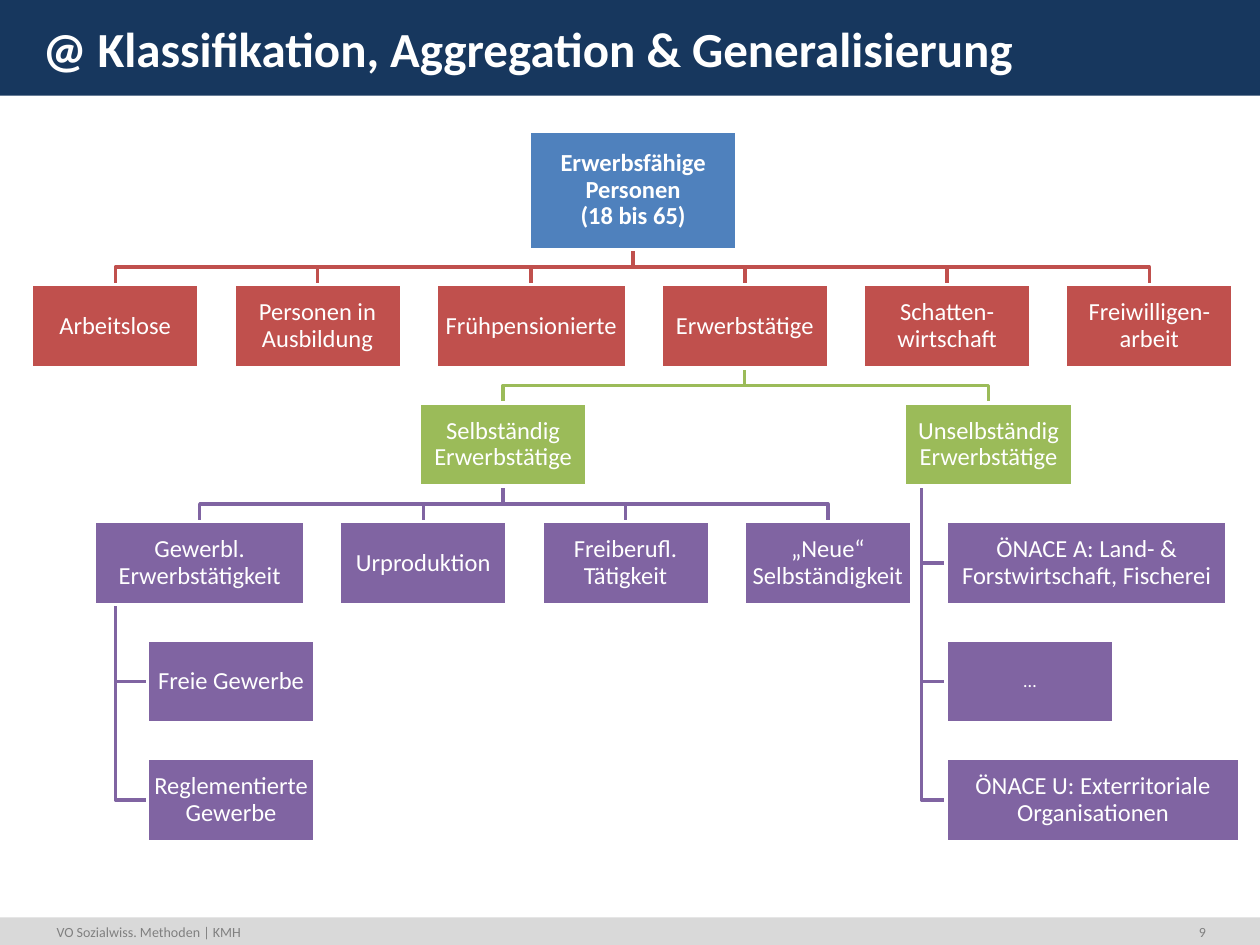
from dataclasses import dataclass

from pptx import Presentation
from pptx import util as u
from pptx.dml.color import RGBColor
from pptx.enum import shapes, text

Pt = u.Pt


@dataclass(frozen=True)
class Theme:
    font: str = "Calibri"
    navy: str = "17375E"
    band: str = "D9D9D9"
    gray: str = "808080"
    white: str = "FFFFFF"
    blue: str = "4F81BD"
    red: str = "C0504D"
    green: str = "9BBB59"
    violet: str = "8064A2"
    head: float = 28
    body: float = 14
    dots: float = 10.5
    foot: float = 8
    line: float = 2


@dataclass
class Box:
    label: str
    x: float
    y: float
    w: float
    h: float
    fill: str
    size: float = Theme.body
    bold: bool = False

    @property
    def mid(self):
        return self.x + self.w / 2

    @property
    def low(self):
        return self.y + self.h


T = Theme()
WIDE, HIGH = 720, 540
BOX_W, BOX_H = 95.8, 47.5
GAP, STEP, TOP = 19.8, 67.7, 162.7


def color(code):
    return RGBColor.from_string(code)


def assign(item, values):
    for name, value in values.items():
        setattr(item, name, value)


def write(shape, words, frame, para, size, shade, bold=False):
    body = shape.text_frame
    assign(body, {"word_wrap": True, **frame})
    first = body.paragraphs[0]
    first.text = words
    assign(first, para)
    for run in first.runs:
        assign(run.font, {"name": T.font, "size": Pt(size), "bold": bold})
        run.font.color.rgb = color(shade)


def label(slide, words, area, size, shade, bold=False, align=text.PP_ALIGN.LEFT):
    box = slide.shapes.add_textbox(*map(Pt, area))
    write(box, words, {"vertical_anchor": text.MSO_ANCHOR.TOP},
          {"alignment": align}, size, shade, bold)


def rect(slide, area, fill, edge=None):
    shape = slide.shapes.add_shape(shapes.MSO_SHAPE.RECTANGLE, *map(Pt, area))
    shape.shadow.inherit = False
    shape.fill.solid()
    shape.fill.fore_color.rgb = color(fill)
    if edge:
        shape.line.color.rgb = color(edge)
        shape.line.width = Pt(T.line)
    else:
        shape.line.fill.background()
    return shape


def node(slide, box):
    shape = rect(slide, (box.x, box.y, box.w, box.h), box.fill, T.white)
    sides = ("left", "top", "right", "bottom")
    frame = {f"margin_{side}": Pt(0.7) for side in sides}
    frame["vertical_anchor"] = text.MSO_ANCHOR.MIDDLE
    para = {"alignment": text.PP_ALIGN.CENTER, "line_spacing": 0.9}
    write(shape, box.label, frame, para, box.size, T.white, box.bold)


def bend(slide, points, shade):
    """Draw an open line through the points."""
    first, *rest = [(Pt(x), Pt(y)) for x, y in points]
    form = slide.shapes.build_freeform(*first)
    form.add_line_segments(rest, close=False)
    shape = form.convert_to_shape()
    shape.shadow.inherit = False
    shape.fill.background()
    shape.line.color.rgb = color(shade)
    shape.line.width = Pt(T.line)


def fork(slide, top, kids):
    """Link a box to the row below it."""
    for kid in kids:
        half = (top.low + kid.y) / 2
        bend(slide, [(top.mid, top.low), (top.mid, half),
                     (kid.mid, half), (kid.mid, kid.y)], kid.fill)


def hang(slide, top, kids):
    """Link a box to the stack that hangs from its left edge."""
    x = top.x + top.w / 10
    for kid in kids:
        y = kid.y + kid.h / 2
        bend(slide, [(x, top.low), (x, y), (kid.x, y)], kid.fill)


def row(level, x, fill, items):
    """Set boxes side by side at an equal gap."""
    boxes = []
    for words, width in items:
        boxes.append(Box(words, x, TOP + level * STEP, width, BOX_H, fill))
        x += width + GAP
    return boxes


def stack(level, x, fill, items):
    return [Box(words, x, TOP + (level + i) * STEP, width, BOX_H, fill)
            for i, (words, width) in enumerate(items)]


def chart(slide):
    root = Box("Erwerbsfähige Personen\n(18 bis 65)", 302.4, 74.9, 118.8, 67.7,
               T.blue, bold=True)
    groups = row(0, 18, T.red, [
        ("Arbeitslose", BOX_W), ("Personen in Ausbildung", BOX_W),
        ("Frühpensionierte", 108.7), ("Erwerbstätige", BOX_W),
        ("Schatten-wirtschaft", BOX_W), ("Freiwilligen-arbeit", BOX_W)])
    own = Box("Selbständig Erwerbstätige", 239.6, TOP + STEP, BOX_W, BOX_H, T.green)
    hired = Box("Unselbständig Erwerbstätige", 517, TOP + STEP, BOX_W, BOX_H, T.green)
    kinds = row(2, 54, T.violet, [
        ("Gewerbl. Erwerbstätigkeit", 120.2), ("Urproduktion", BOX_W),
        ("Freiberufl. Tätigkeit", BOX_W), ("„Neue“ Selbständigkeit", BOX_W)])
    trades = stack(3, 84.2, T.violet, [
        ("Freie Gewerbe", BOX_W), ("Reglementierte Gewerbe", BOX_W)])
    fields = stack(2, 540.7, T.violet, [
        ("ÖNACE A: Land- & Forstwirtschaft, Fischerei", 160.6), ("…", BOX_W),
        ("ÖNACE U: Exterritoriale Organisationen", 167.8)])
    fields[1].size = T.dots

    fork(slide, root, groups)
    fork(slide, groups[3], [own, hired])
    fork(slide, own, kinds)
    hang(slide, kinds[0], trades)
    hang(slide, hired, fields)
    for box in [root, *groups, own, hired, *kinds, *trades, *fields]:
        node(slide, box)


def main():
    deck = Presentation()
    assign(deck, {"slide_width": Pt(WIDE), "slide_height": Pt(HIGH)})
    slide = deck.slides.add_slide(deck.slide_layouts[6])
    rect(slide, (0, 524.2, WIDE, 15.8), T.band)
    rect(slide, (0, 0, WIDE, 54.7), T.navy)
    label(slide, "VO Sozialwiss. Methoden | KMH", (25.2, 524.2, 215.3, 17.3),
          T.foot, T.gray)
    label(slide, "9", (666, 524.2, 30.2, 17.3), T.foot, T.gray,
          align=text.PP_ALIGN.RIGHT)
    label(slide, "@ Klassifikation, Aggregation & Generalisierung",
          (17.3, 7.2, 679.7, 36), T.head, T.white, bold=True)
    chart(slide)
    deck.save("out.pptx")


if __name__ == "__main__":
    main()
